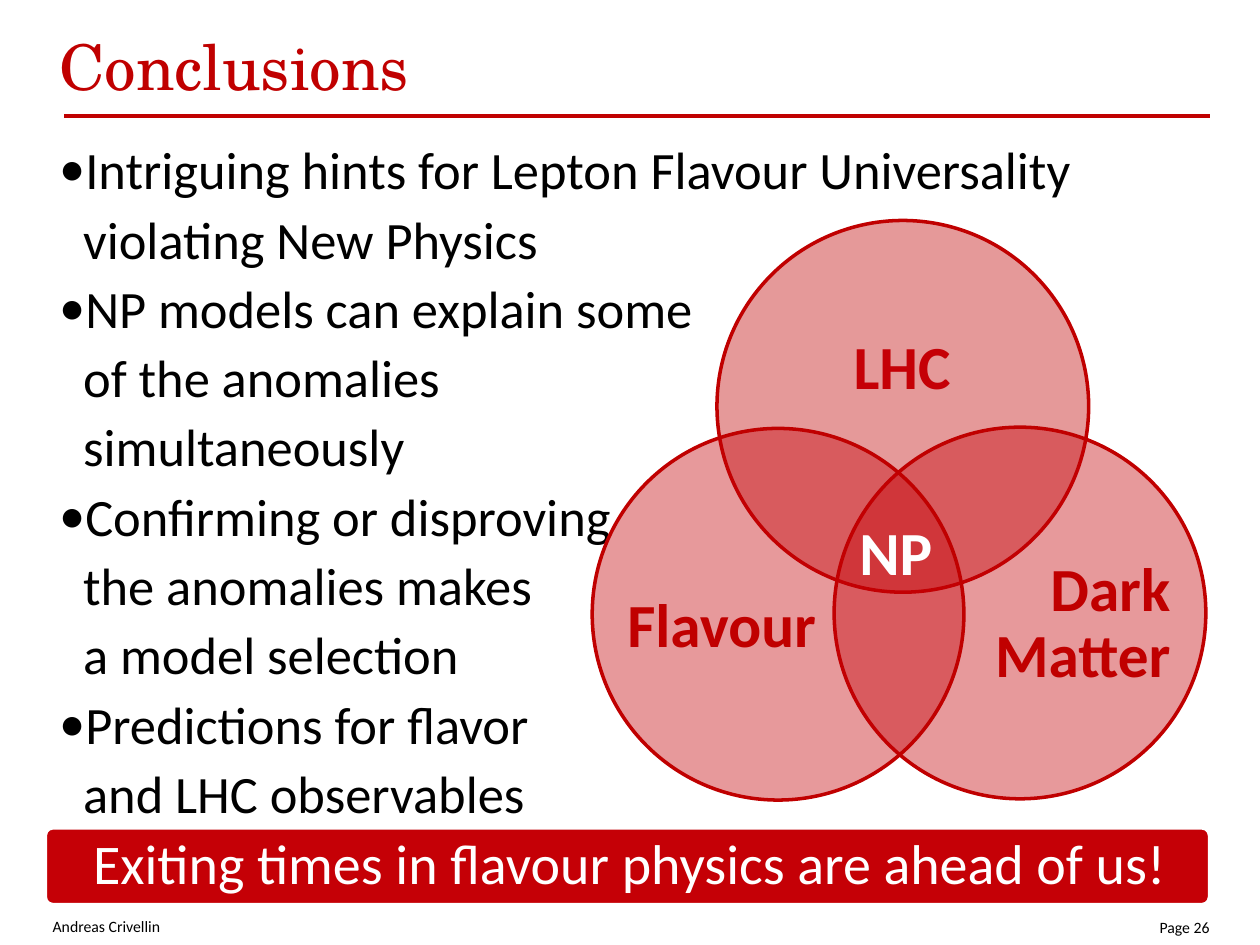
from lxml import etree
from pptx import Presentation
from pptx.dml.color import RGBColor
from pptx.enum import shapes, text
from pptx.oxml.ns import qn
from pptx.util import Inches, Pt

RED = RGBColor(0xC0, 0x00, 0x00)
CRIMSON = RGBColor(0xC5, 0x00, 0x06)
BLACK = RGBColor(0x00, 0x00, 0x00)
WHITE = RGBColor(0xFF, 0xFF, 0xFF)

LEFT, CENTER, RIGHT = text.PP_ALIGN.LEFT, text.PP_ALIGN.CENTER, text.PP_ALIGN.RIGHT
TOP, MIDDLE = text.MSO_ANCHOR.TOP, text.MSO_ANCHOR.MIDDLE

TITLE = "Conclusions"
POINTS = [
    "Intriguing hints for Lepton Flavour Universality violating New Physics",
    "NP models can explain some\nof the anomalies\nsimultaneously",
    "Confirming or disproving\nthe anomalies makes\na model selection",
    "Predictions for flavor\nand LHC observables",
]
BANNER = "Exiting times in flavour physics are ahead of us!"
FOOTERS = [("Page 26", (8.97, 7.28, 0.63, 0.22)),
           ("Andreas Crivellin", (-0.48, 7.28, 1.75, 0.24))]

DIAMETER = 2.95
# label, circle left and top, circle fill, label box, label alignment, label colour
CIRCLES = [
    ("LHC", (5.69, 1.75), RED, (6.08, 2.27, 2.16, 1.33), CENTER, CRIMSON),
    ("Dark Matter", (6.62, 3.39), CRIMSON, (7.52, 4.15, 1.77, 1.62), RIGHT, RED),
    ("Flavour", (4.7, 3.4), CRIMSON, (4.98, 4.17, 1.77, 1.62), LEFT, RED),
]
LABEL_FORMAT = {"size": Pt(35), "bold": True}


def add_text(slide, box, paragraphs, font, align=LEFT, anchor=TOP, spacing=1.0):
    """Add a margin-free text box and return its paragraphs."""
    frame = slide.shapes.add_textbox(*map(Inches, box)).text_frame
    frame.word_wrap = True
    frame.vertical_anchor = anchor
    for side in ("left", "right", "top", "bottom"):
        setattr(frame, f"margin_{side}", 0)
    for index, words in enumerate(paragraphs):
        paragraph = frame.add_paragraph() if index else frame.paragraphs[0]
        paragraph.text = words
        paragraph.alignment = align
        paragraph.line_spacing = spacing
        for run in paragraph.runs:
            format_values = {"name": "Calibri", **font}
            run.font.color.rgb = format_values.pop("color")
            for name, value in format_values.items():
                setattr(run.font, name, value)
    return frame.paragraphs


def add_bullet(paragraph, indent):
    properties = paragraph._p.get_or_add_pPr()
    properties.set("marL", str(Inches(indent)))
    properties.set("indent", str(-Inches(indent)))
    etree.SubElement(properties, qn("a:buFont")).set("typeface", "Calibri")
    etree.SubElement(properties, qn("a:buChar")).set("char", "•")


def add_filled(slide, preset, box, fill, line, opacity=100):
    shape = slide.shapes.add_shape(preset, *map(Inches, box))
    shape.shadow.inherit = False
    shape.fill.solid()
    shape.fill.fore_color.rgb = fill
    shape.line.color.rgb = line
    shape.line.width = Pt(2)
    if opacity < 100:
        color = shape._element.spPr.find(qn("a:solidFill"))[0]
        etree.SubElement(color, qn("a:alpha")).set("val", str(opacity * 1000))
    return shape


def main():
    deck = Presentation()
    deck.slide_width, deck.slide_height = Inches(10), Inches(7.5)
    slide = deck.slides.add_slide(deck.slide_layouts[6])

    rule = slide.shapes.add_connector(
        shapes.MSO_CONNECTOR.STRAIGHT, *map(Inches, (0.51, 0.92, 9.6, 0.92)))
    rule.line.color.rgb = RED
    rule.line.width = Pt(2.5)
    etree.SubElement(rule._element.spPr, qn("a:effectLst"))

    points = add_text(slide, (0.47, 1.04, 9.13, 6.14), POINTS,
                      {"size": Pt(30), "color": BLACK}, spacing=1.1)
    for point in points:
        add_bullet(point, 0.19)
    add_text(slide, (0.47, 0.22, 7.34, 0.56), [TITLE],
             {"size": Pt(36), "name": "TeX Gyre Schola", "color": RED})
    for words, box in FOOTERS:
        add_text(slide, box, [words], {"size": Pt(9), "color": BLACK}, RIGHT)

    for label, corner, fill, box, align, color in CIRCLES:
        add_filled(slide, shapes.MSO_SHAPE.OVAL, (*corner, DIAMETER, DIAMETER),
                   fill, RED, opacity=40)
        add_text(slide, box, [label], {**LABEL_FORMAT, "color": color},
                 align, MIDDLE, 0.9)

    banner = add_filled(slide, shapes.MSO_SHAPE.ROUNDED_RECTANGLE,
                        (0.36, 6.57, 9.24, 0.61), CRIMSON, WHITE)
    banner.adjustments[0] = 0.1
    add_text(slide, (0, 6.7, 10, 0.36), [BANNER],
             {"size": Pt(32), "color": WHITE}, CENTER, MIDDLE, 0.9)
    add_text(slide, (6.82, 4.02, 1, 1), ["NP"],
             {**LABEL_FORMAT, "color": WHITE}, spacing=1.1)

    deck.save("out.pptx")


if __name__ == "__main__":
    main()
